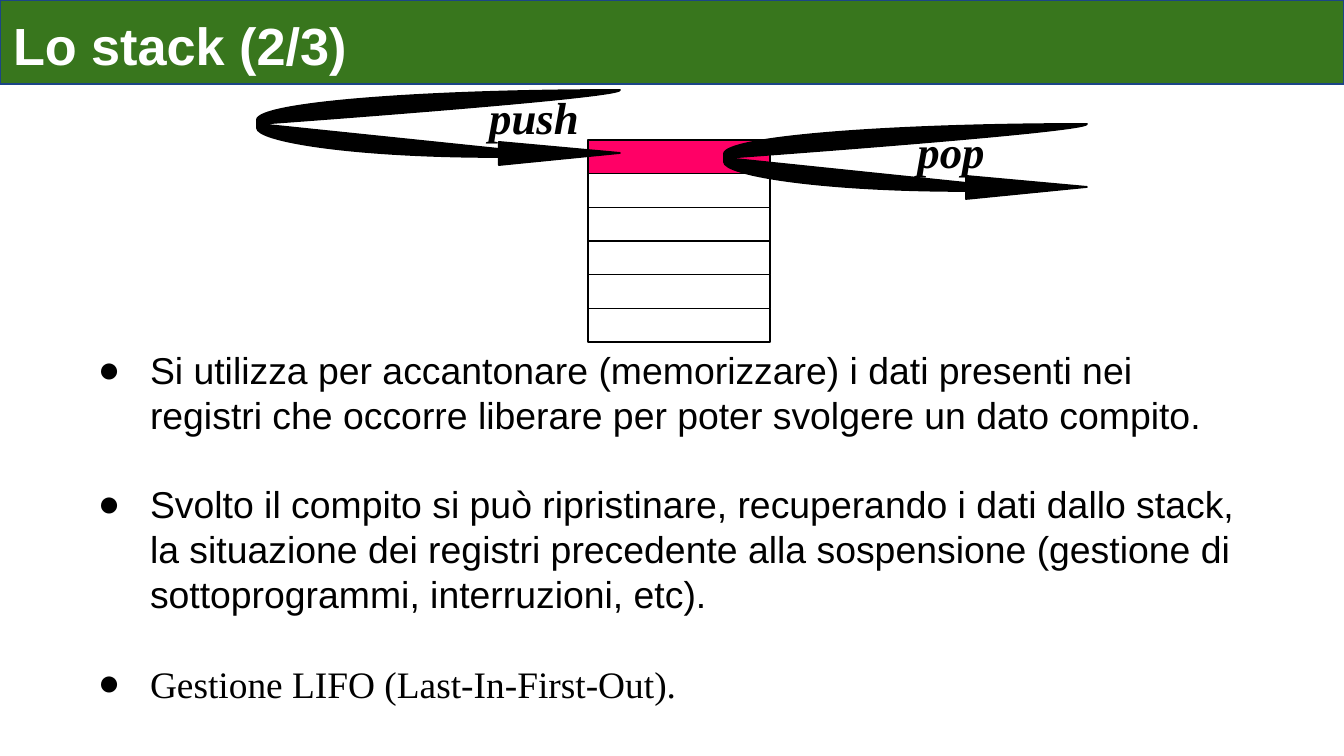
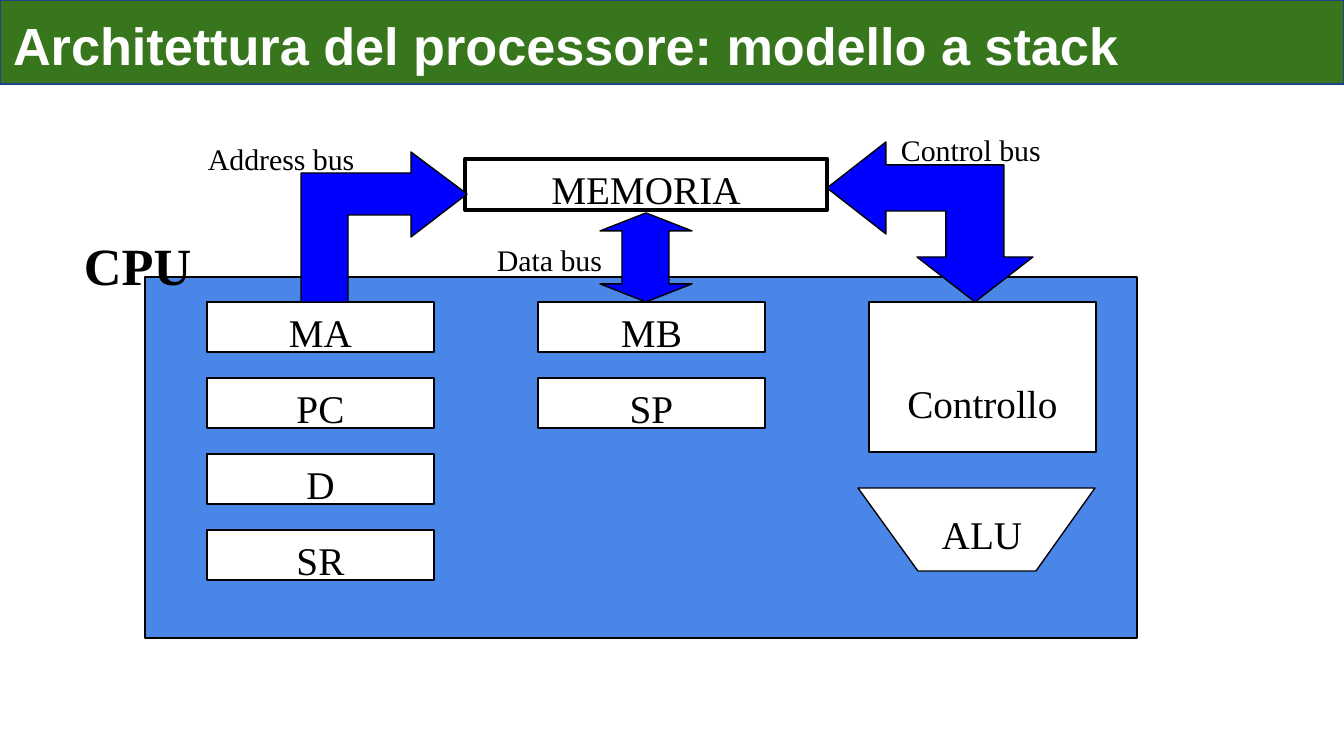
from dataclasses import dataclass
from typing import NamedTuple

from lxml import etree
from pptx import Presentation
from pptx.dml.color import RGBColor
from pptx.enum.shapes import MSO_SHAPE
from pptx.enum.text import MSO_ANCHOR, MSO_AUTO_SIZE, PP_ALIGN
from pptx.oxml.ns import qn
from pptx.util import Emu, Pt

RECTANGLE = MSO_SHAPE.RECTANGLE
TOP, MIDDLE = MSO_ANCHOR.TOP, MSO_ANCHOR.MIDDLE
LEFT, CENTER = PP_ALIGN.LEFT, PP_ALIGN.CENTER
NO_AUTOFIT = MSO_AUTO_SIZE.NONE
TITLE_AND_CONTENT, TITLE_ONLY = 1, 5
EMU_PER_PX = 914400 / 134.4


@dataclass(frozen=True)
class Theme:
    green: str = "38761D"
    navy: str = "1C4587"
    white: str = "FFFFFF"
    black: str = "000000"
    pink: str = "FF0066"
    panel: str = "4A86E8"
    bus: str = "0000FF"
    sans: str = "Arial"
    serif: str = "Times New Roman"
    title_size: int = 28
    operation_size: int = 24
    block_size: int = 21
    body_size: int = 20
    bus_size: int = 16
    body_spacing: int = 24
    thin: float = 0.75
    medium: float = 1
    thick: float = 2.25


THEME = Theme()


class Box(NamedTuple):
    left: int
    top: int
    width: int
    height: int

    def inside(self, left, top, width, height):
        return Box(self.left + left, self.top + top, width, height)


SLIDE_BOX = Box(0, 0, 1344, 756)
TITLE_BOX = Box(0, 0, 1344, 84)
BODY_BOX = Box(71, 341, 1192, 384)
STACK_BOX = Box(588, 140, 182, 202)
PUSH_BOX = Box(257, 90, 363, 75)
POP_BOX = Box(724, 124, 363, 75)
BUS_BOX = Box(145, 126, 992, 176)
CPU_BOX = Box(145, 277, 992, 361)

BULLETS = [
    ("Si utilizza per accantonare (memorizzare) i dati presenti nei registri che "
     "occorre liberare per poter svolgere un dato compito.", THEME.sans),
    ("Svolto il compito si può ripristinare, recuperando i dati dallo stack, la "
     "situazione dei registri precedente alla sospensione (gestione di "
     "sottoprogrammi, interruzioni, etc).", THEME.sans),
    ("Gestione LIFO (Last-In-First-Out).", THEME.serif),
]
REGISTER_COLUMNS = [["MA", "PC", "D", "SR"], ["MB", "SP"]]
ADDRESS_BUS = [(203, 176), (203, 89), (266, 89), (266, 111), (322, 68),
               (266, 26), (266, 47), (156, 47), (156, 176)]
DATA_BUS = [(455, 105), (501, 87), (547, 105), (524, 105), (524, 158),
            (547, 158), (501, 176), (455, 158), (477, 158), (477, 105)]
CONTROL_BUS = [(682, 62), (741, 108), (741, 85), (801, 85), (801, 131), (772, 131),
               (830, 176), (888, 131), (859, 131), (859, 39), (741, 39), (741, 16)]
BUS_LABELS = [("Address bus", (51, 9, 249, 40)),
              ("Data bus", (340, 110, 145, 40)),
              ("Control bus", (744, 0, 249, 40))]
ALU_OUTLINE = [(713, 211), (950, 211), (891, 294), (773, 294)]
CURVED_ARROW = [(363, 0), (163, 0), (0, 13), (0, 30), (0, 38), (0, 51), (95, 67),
                (242, 67), (242, 75), (363, 63), (242, 52), (242, 59), (1, 34),
                (1, 34), (363, 8), (363, 0)]
CURVE_STARTS = (1, 5, 13)


def px(length):
    return Emu(round(length * EMU_PER_PX))


def place(shape, box):
    shape.left, shape.top, shape.width, shape.height = map(px, box)


def paint(shape, fill=None, line=None, weight=THEME.thin):
    if fill:
        shape.fill.solid()
        shape.fill.fore_color.rgb = RGBColor.from_string(fill)
    else:
        shape.fill.background()
    if line:
        shape.line.color.rgb = RGBColor.from_string(line)
        shape.line.width = Pt(weight)
    else:
        shape.line.fill.background()


def frame_text(text_frame, horizontal=12, top=6, bottom=6, anchor=TOP):
    text_frame.word_wrap = True
    text_frame.auto_size = NO_AUTOFIT
    text_frame.vertical_anchor = anchor
    text_frame.margin_left = text_frame.margin_right = px(horizontal)
    text_frame.margin_top, text_frame.margin_bottom = px(top), px(bottom)


def format_paragraph(paragraph, size, font=THEME.serif, color=THEME.black,
                     bold=False, italic=False, alignment=LEFT):
    paragraph.alignment = alignment
    for run in paragraph.runs:
        run.font.name, run.font.size = font, Pt(size)
        run.font.bold, run.font.italic = bold, italic
        run.font.color.rgb = RGBColor.from_string(color)


def add_outline(slide, box, points, fill=None, line=THEME.black, weight=THEME.thin):
    corners = [(px(box.left + x), px(box.top + y)) for x, y in points]
    builder = slide.shapes.build_freeform(*corners[0])
    builder.add_line_segments(corners[1:], close=True)
    outline = builder.convert_to_shape()
    outline.shadow.inherit = False
    paint(outline, fill, line, weight)
    return outline


def add_frame(slide, box, **style):
    corners = [(0, 0), (box.width, 0), (box.width, box.height), (0, box.height)]
    return add_outline(slide, box, corners, **style)


def add_label(slide, box, text, size, fill=None, **style):
    label = add_frame(slide, box, fill=fill, line=None)
    frame_text(label.text_frame)
    label.text_frame.text = text
    format_paragraph(label.text_frame.paragraphs[0], size, **style)


def add_block(slide, box, text, top_inset=6, **style):
    block = add_frame(slide, box, **style)
    frame_text(block.text_frame, top=top_inset)
    block.text_frame.text = text
    format_paragraph(block.text_frame.paragraphs[0], THEME.block_size, alignment=CENTER)


def add_rectangle(slide, box, fill=None):
    rectangle = slide.shapes.add_shape(RECTANGLE, *map(px, box))
    rectangle.shadow.inherit = False
    paint(rectangle, fill, THEME.black)


def add_title(slide, box, text):
    title = slide.shapes.title
    place(title, box)
    paint(title, THEME.green, THEME.navy)
    frame_text(title.text_frame, 13, 16, 10, MIDDLE)
    title.text_frame.text = text
    format_paragraph(title.text_frame.paragraphs[0], THEME.title_size,
                     THEME.sans, THEME.white, bold=True)


def add_bullet(paragraph):
    properties = paragraph._p.get_or_add_pPr()
    properties.set("marL", str(px(67)))
    properties.set("indent", str(-px(52)))
    color = etree.SubElement(properties, qn("a:buClr"))
    etree.SubElement(color, qn("a:srgbClr"), val=THEME.black)
    etree.SubElement(properties, qn("a:buFont"), typeface=THEME.sans)
    etree.SubElement(properties, qn("a:buChar"), char="●")


def add_body(slide, box, bullets):
    body = slide.placeholders[1]
    place(body, box)
    text_frame = body.text_frame
    frame_text(text_frame)
    text_frame.text = "\n".join(text for text, _ in bullets)
    for paragraph, (_, font) in zip(text_frame.paragraphs, bullets):
        format_paragraph(paragraph, THEME.body_size, font)
        paragraph.line_spacing = Pt(THEME.body_spacing)
        paragraph.space_before = Pt(0)
        paragraph.space_after = Pt(THEME.body_spacing)
        add_bullet(paragraph)


def bend(outline, starts):
    segments = list(outline._element.iter(qn("a:lnTo")))
    for start in starts:
        first, second, end = segments[start - 1:start + 2]
        first.tag = qn("a:cubicBezTo")
        for segment in (second, end):
            first.append(segment[0])
            segment.getparent().remove(segment)


def add_operation(slide, box, name, label_left):
    arrow = add_outline(slide, box, CURVED_ARROW, THEME.black, weight=THEME.medium)
    bend(arrow, CURVE_STARTS)
    add_label(slide, box.inside(label_left, -6, 160, 58), name, THEME.operation_size,
              bold=True, italic=True, alignment=CENTER)


def add_stack(slide, box, cells=6):
    height = box.height / cells
    for index in range(cells):
        add_rectangle(slide, box.inside(0, index * height, box.width, height),
                      None if index else THEME.pink)


def add_cpu(slide, box):
    add_rectangle(slide, box, THEME.panel)
    for column, names in enumerate(REGISTER_COLUMNS):
        for row, name in enumerate(names):
            add_block(slide, box.inside(62 + 331 * column, 25 + 76 * row, 227, 50),
                      name, fill=THEME.white)
    add_block(slide, box.inside(724, 25, 227, 150), "Controllo", top_inset=77,
              fill=THEME.white)
    add_outline(slide, box, ALU_OUTLINE, THEME.white)
    add_label(slide, box.inside(775, 227, 124, 50), "ALU", THEME.block_size,
              THEME.white, alignment=CENTER)
    add_label(slide, box.inside(-73, -50, 145, 65), "CPU", THEME.title_size, bold=True)


def add_memory_and_buses(slide, box):
    add_block(slide, box.inside(320, 33, 362, 51), "MEMORIA", weight=THEME.thick)
    for points in (ADDRESS_BUS, DATA_BUS, CONTROL_BUS):
        add_outline(slide, box, points, THEME.bus)
    for text, label_box in BUS_LABELS:
        add_label(slide, box.inside(*label_box), text, THEME.bus_size)


def add_slide(presentation, layout, title):
    slide = presentation.slides.add_slide(presentation.slide_layouts[layout])
    add_title(slide, TITLE_BOX, title)
    return slide


def build_stack_slide(presentation):
    slide = add_slide(presentation, TITLE_AND_CONTENT, "Lo stack (2/3)")
    add_body(slide, BODY_BOX, BULLETS)
    add_stack(slide, STACK_BOX)
    add_operation(slide, PUSH_BOX, "push", 197)
    add_operation(slide, POP_BOX, "pop", 147)


def build_processor_slide(presentation):
    slide = add_slide(presentation, TITLE_ONLY,
                      "Architettura del processore: modello a stack")
    add_cpu(slide, CPU_BOX)
    add_memory_and_buses(slide, BUS_BOX)


def main():
    presentation = Presentation()
    presentation.slide_width = px(SLIDE_BOX.width)
    presentation.slide_height = px(SLIDE_BOX.height)
    build_stack_slide(presentation)
    build_processor_slide(presentation)
    presentation.save("out.pptx")


if __name__ == "__main__":
    main()
